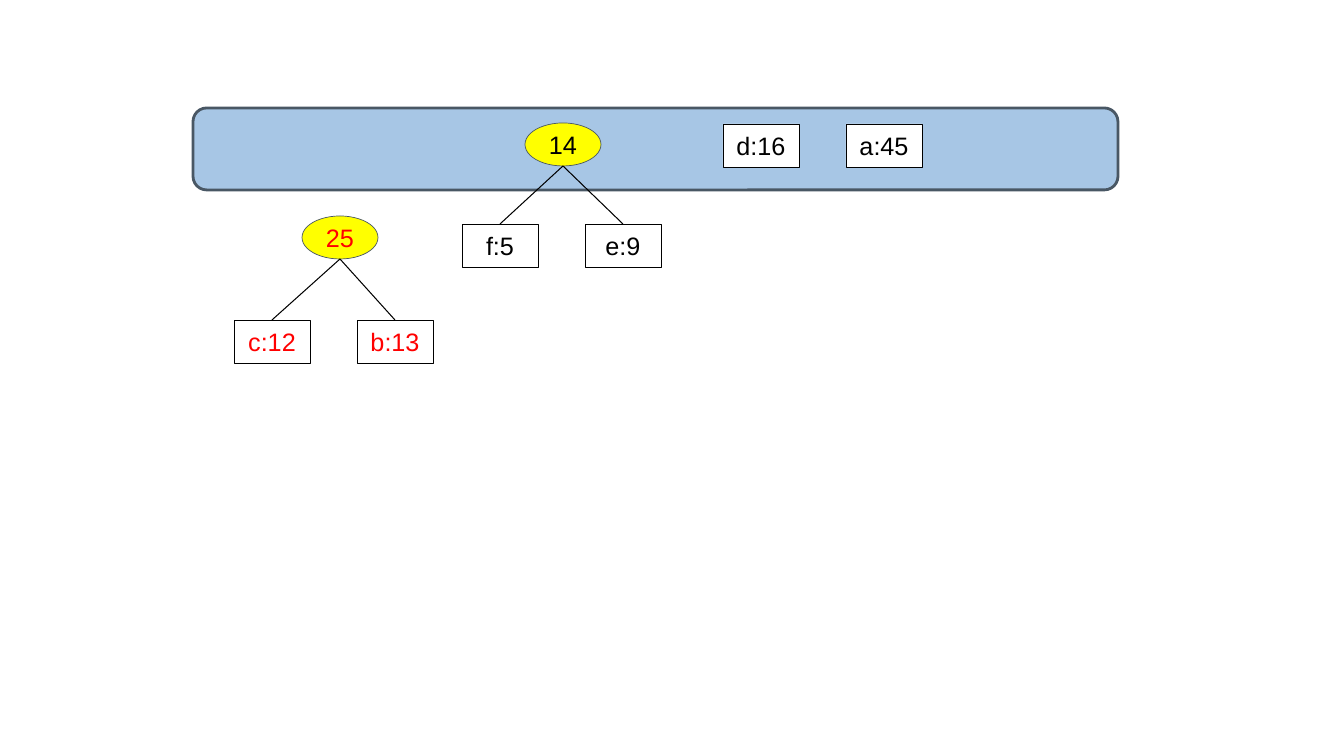
from lxml.etree import SubElement
from pptx import Presentation
from pptx.dml.color import RGBColor
from pptx.enum.shapes import MSO_CONNECTOR, MSO_SHAPE
from pptx.enum.text import MSO_ANCHOR, PP_ALIGN
from pptx.oxml.ns import qn
from pptx.util import Pt

COLORS = {
    "queue": "A7C6E5",
    "outline": "495764",
    "leaf": "FFFFFF",
    "sum": "FFFF00",
    "ink": "000000",
    "merged": "FF0000",
}
EMU_PER_PX = 914400 / 100.8
NODE_WIDTH, NODE_HEIGHT = 76, 43
LEAF_STEP = 123


def px(length):
    return round(length * EMU_PER_PX)


def rgb(name):
    return RGBColor.from_string(COLORS[name])


def apply_format(target, values):
    for name, value in values.items():
        setattr(target, name, value)


class TreeSlide:
    frame_format = {
        "margin_left": 0,
        "margin_right": 0,
        "margin_top": 0,
        "margin_bottom": 0,
        "word_wrap": True,
        "vertical_anchor": MSO_ANCHOR.MIDDLE,
    }
    font_format = {"name": "Arial", "size": Pt(18)}

    def __init__(self, slide):
        self.slide = slide

    def box(self, kind, left, top, width, height, fill, line, weight):
        shape = self.slide.shapes.add_shape(kind, px(left), px(top), px(width), px(height))
        shape.shadow.inherit = False
        shape.fill.solid()
        shape.fill.fore_color.rgb = rgb(fill)
        shape.line.color.rgb = rgb(line)
        shape.line.width = Pt(weight)
        return shape

    def queue(self, left, top, width, height):
        self.box(MSO_SHAPE.ROUNDED_RECTANGLE, left, top, width, height, "queue", "outline", 2)

    def node(self, kind, text, left, top, fill, line, color):
        shape = self.box(kind, left, top, NODE_WIDTH, NODE_HEIGHT, fill, line, 0.5)
        apply_format(shape.text_frame, self.frame_format)
        paragraph = shape.text_frame.paragraphs[0]
        paragraph.text = text
        paragraph.alignment = PP_ALIGN.CENTER
        apply_format(paragraph.font, self.font_format)
        paragraph.font.color.rgb = rgb(color)

    def leaves(self, texts, left, top, color="ink"):
        for index, text in enumerate(texts):
            self.node(MSO_SHAPE.RECTANGLE, text, left + index * LEAF_STEP, top, "leaf", "ink", color)

    def branch(self, start, end):
        connector = self.slide.shapes.add_connector(
            MSO_CONNECTOR.STRAIGHT, *[px(length) for length in (*start, *end)]
        )
        connector.line.color.rgb = rgb("ink")
        connector.line.width = Pt(0.75)
        SubElement(connector._element.spPr, qn("a:effectLst"))

    def tree(self, total, root, texts, first_leaf, color):
        root_left, root_top = root
        leaf_left, leaf_top = first_leaf
        self.leaves(texts, leaf_left, leaf_top, color)
        self.node(MSO_SHAPE.OVAL, total, root_left, root_top, "sum", "outline", color)
        root_bottom = (root_left + NODE_WIDTH // 2, root_top + NODE_HEIGHT)
        for index in range(len(texts)):
            leaf_center = leaf_left + index * LEAF_STEP + NODE_WIDTH // 2
            self.branch((leaf_center, leaf_top), root_bottom)


def main():
    presentation = Presentation()
    presentation.slide_width = px(1344)
    presentation.slide_height = px(756)
    slide = presentation.slides.add_slide(presentation.slide_layouts[6])
    tree_slide = TreeSlide(slide)
    tree_slide.queue(193, 108, 925, 82)
    tree_slide.leaves(["d:16", "a:45"], 723, 124)
    tree_slide.tree("14", (525, 123), ["f:5", "e:9"], (462, 224), "ink")
    tree_slide.tree("25", (302, 216), ["c:12", "b:13"], (234, 320), "merged")
    presentation.save("out.pptx")


if __name__ == "__main__":
    main()
